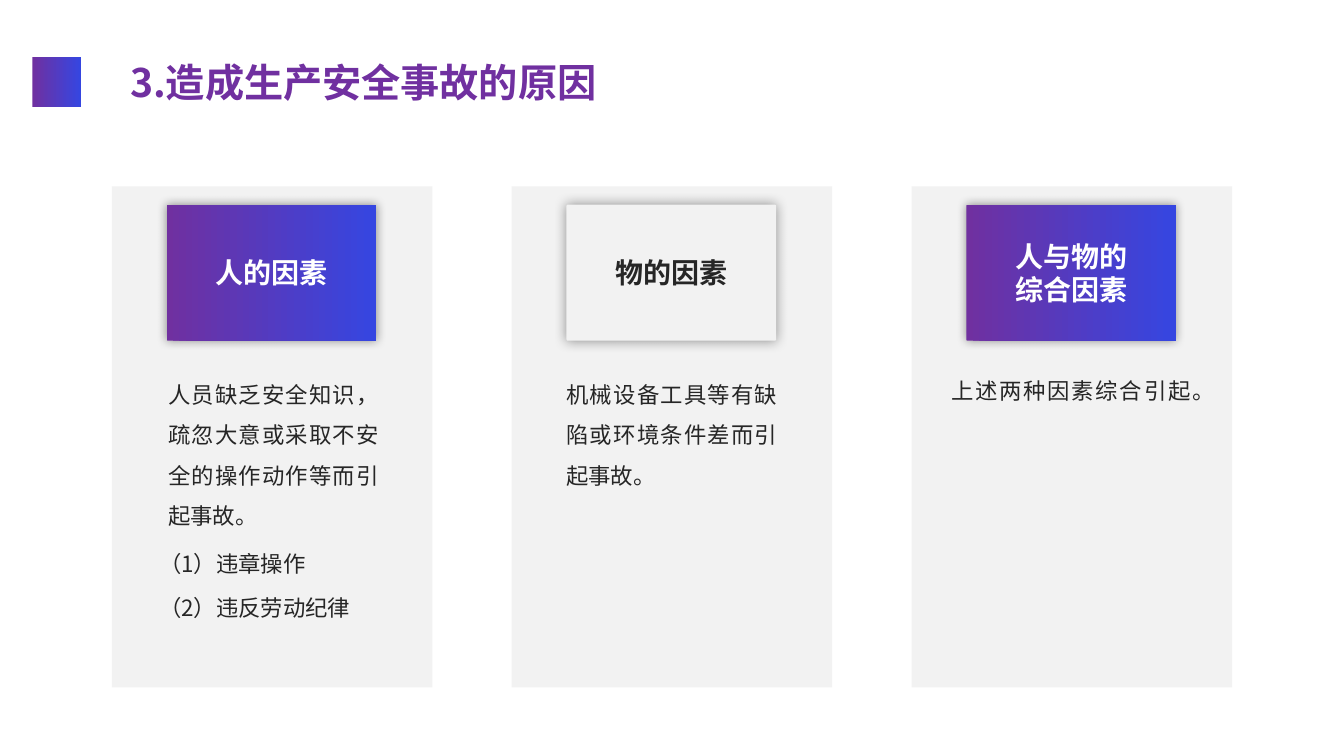
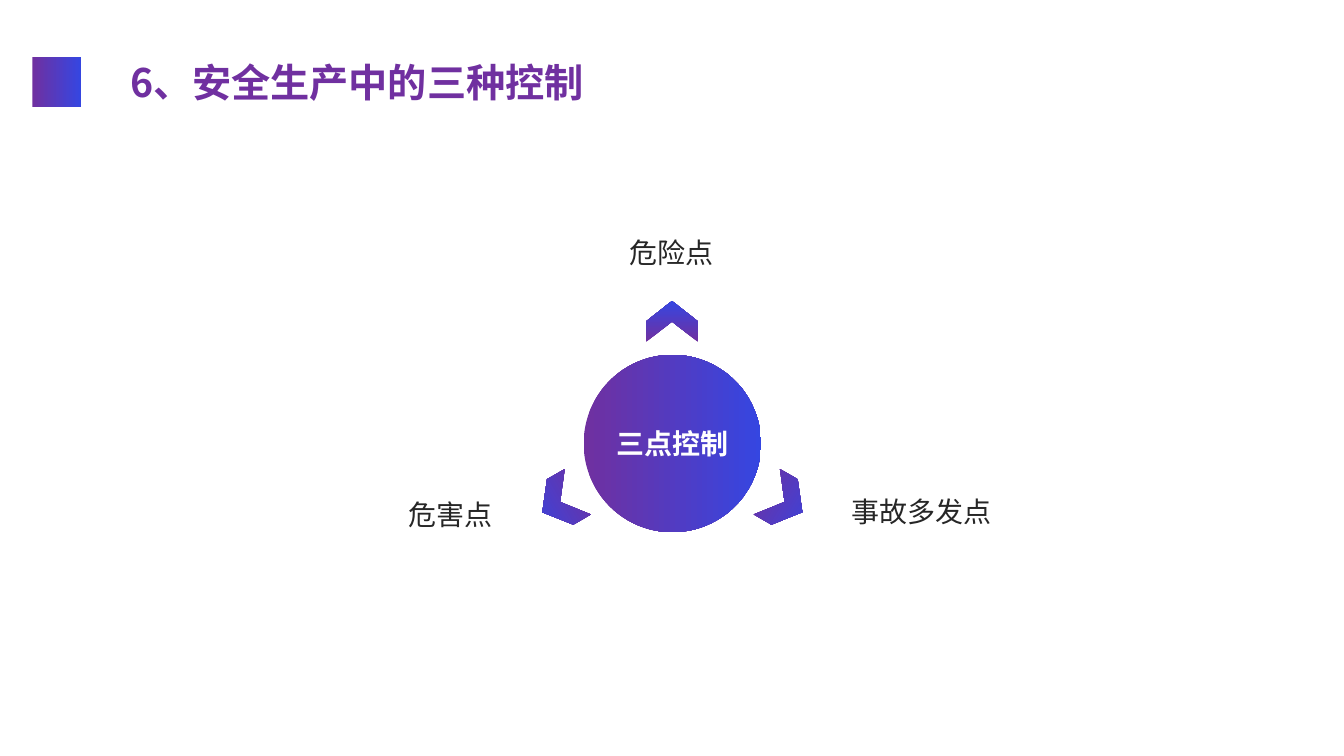
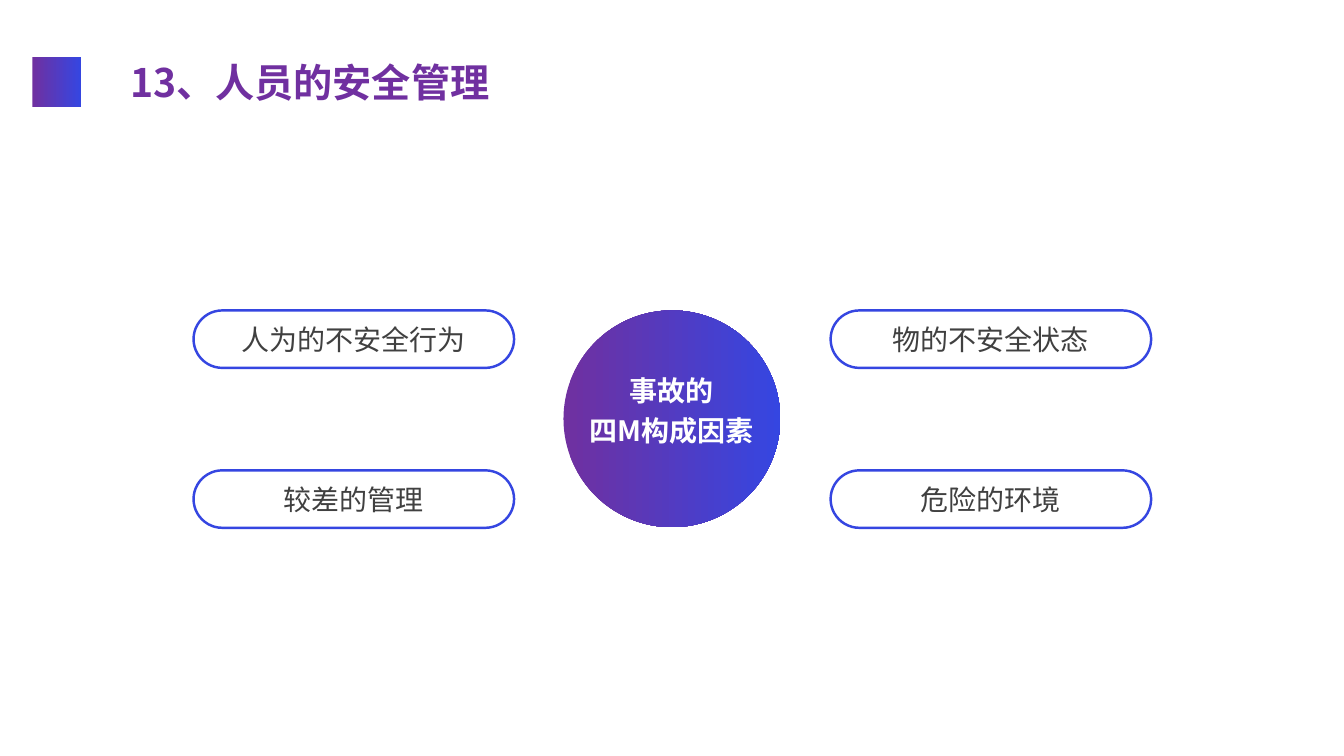
from lxml.etree import SubElement
from pptx import Presentation
from pptx.dml.color import RGBColor
from pptx.enum.shapes import MSO_SHAPE as Preset
from pptx.enum.text import MSO_ANCHOR as Anchor, MSO_AUTO_SIZE as AutoSize, PP_ALIGN as Align
from pptx.oxml.ns import qn
from pptx.util import Inches, Pt

COLORS = {"purple": "7030A0", "blue": "3546E1", "panel": "F2F2F2",
          "white": "FFFFFF", "ink": "262626", "soft": "404040", "shadow": "000000"}
GRADIENT = ("purple", "blue")
FONT = "Noto Sans CJK SC"
LEADING = 1.2
TITLE_ONLY, TITLE_AND_BODY = 5, 1


def grid(*cells):
    """Lengths on a grid of 40 columns by 22.5 rows, three cells to the inch."""
    return [Inches(cell / 3) for cell in cells]


def rgb(name):
    return RGBColor.from_string(COLORS[name])


def paint(fill, color):
    """Fill with one colour, or with a left-to-right gradient for a pair."""
    if color is None:
        fill.background()
    elif isinstance(color, tuple):
        fill.gradient()
        fill.gradient_angle = 0
        for stop, name in zip(fill.gradient_stops, color):
            stop.color.rgb = rgb(name)
    else:
        fill.solid()
        fill.fore_color.rgb = rgb(color)


class Deck:
    def __init__(self):
        self.presentation = Presentation()
        self.presentation.slide_width, self.presentation.slide_height = grid(40, 22.5)
        self.slide = None

    def add_slide(self, title, title_columns, layout=TITLE_ONLY):
        layouts = self.presentation.slide_layouts
        self.slide = self.presentation.slides.add_slide(layouts[layout])
        self.shape(Preset.RECTANGLE, (0.96, 1.71, 1.44, 1.47), GRADIENT)
        self.placeholder(0, (3.57, 1.59, title_columns, 1.71), [title],
                         size=28, bold=True, color=GRADIENT)

    def set_text(self, shape, lines, size=20, bold=False, color="ink", align=Align.LEFT,
                 anchor=Anchor.TOP, wrap=True, spacing=1, gap=0.0):
        frame = shape.text_frame
        frame.text = "\n".join(lines)
        for name, value in {"auto_size": AutoSize.NONE, "word_wrap": wrap,
                            "vertical_anchor": anchor}.items():
            setattr(frame, name, value)
        for index, paragraph in enumerate(frame.paragraphs):
            values = {"alignment": align, "line_spacing": Pt(size * LEADING * spacing),
                      "space_before": Pt(size * gap if index else 0)}
            for name, value in values.items():
                setattr(paragraph, name, value)
            properties = paragraph._p.get_or_add_pPr()
            for name, value in {"marL": "0", "indent": "0", "hangingPunct": "1"}.items():
                properties.set(name, value)
            SubElement(properties, qn("a:buNone"))
            for run in paragraph.runs:
                for name, value in {"name": FONT, "size": Pt(size), "bold": bold}.items():
                    setattr(run.font, name, value)
                paint(run.font.fill, color)
                SubElement(run._r.get_or_add_rPr(), qn("a:ea")).set("typeface", FONT)

    def placeholder(self, index, cells, lines, **style):
        """Move a template placeholder to the front and fill it."""
        shape = self.slide.placeholders[index]
        for name, value in zip(("left", "top", "width", "height"), grid(*cells)):
            setattr(shape, name, value)
        self.slide.shapes._spTree.append(shape._element)
        self.set_text(shape, lines, **style)

    def text(self, cells, lines, **style):
        self.set_text(self.slide.shapes.add_textbox(*grid(*cells)), lines, **style)

    def label(self, center, line):
        x, y = center
        self.text((x - 2.4, y - 0.66, 4.8, 1.32), [line],
                  align=Align.CENTER, anchor=Anchor.MIDDLE, wrap=False)

    def shape(self, preset, cells, fill=None, lines=(), line=None, rounding=None,
              rotation=0, color="white", bold=True):
        shape = self.slide.shapes.add_shape(preset, *grid(*cells))
        shape.shadow.inherit = False
        shape.rotation = rotation
        paint(shape.fill, fill)
        paint(shape.line.fill, line)
        if line:
            shape.line.width = Pt(1.75)
        if rounding is not None:
            shape.adjustments[0] = rounding
        if lines:
            for side in ("left", "right", "top", "bottom"):
                setattr(shape.text_frame, f"margin_{side}", 0)
            self.set_text(shape, lines, color=color, bold=bold, align=Align.CENTER,
                          anchor=Anchor.MIDDLE, wrap=False)
        return shape

    def glow(self, shape, blur):
        """Soft shadow on all sides."""
        effects = shape._element.spPr.find(qn("a:effectLst"))
        shadow = SubElement(effects, qn("a:outerShdw"), blurRad=str(Pt(blur)),
                            dist="0", dir="0", algn="ctr", rotWithShape="0")
        color = SubElement(shadow, qn("a:srgbClr"), val=COLORS["shadow"])
        SubElement(color, qn("a:alpha"), val="40000")


def causes_slide(deck):
    deck.add_slide("3.造成生产安全事故的原因", 14.64, TITLE_AND_BODY)
    # Three panels, each with a heading card
    cards = [(["人的因素"], GRADIENT, "white", 7),
             (["物的因素"], "panel", "ink", 9),
             (["人与物的", "综合因素"], GRADIENT, "white", 7)]
    for column, (lines, fill, color, blur) in enumerate(cards):
        left = 3.33 + 11.9 * column
        deck.shape(Preset.RECTANGLE, (left, 5.55, 9.54, 14.91), "panel")
        card = deck.shape(Preset.ROUNDED_RECTANGLE, (left + 1.63, 6.09, 6.24, 4.05),
                          fill, lines, rounding=0.01, color=color)
        deck.glow(card, blur)
    # Explanations
    body = {"size": 16, "align": Align.JUSTIFY}
    loose = {**body, "spacing": 1.5, "gap": 0.2}
    deck.text((4.71, 10.8, 6.87, 5.01),
              ["人员缺乏安全知识，疏忽大意或采取不安全的操作动作等而引起事故。"], **loose)
    deck.placeholder(1, (4.44, 15.81, 6.33, 2.76),
                     ["（1）违章操作", "（2）违反劳动纪律"], **loose)
    deck.text((16.56, 10.8, 6.87, 3.81),
              ["机械设备工具等有缺陷或环境条件差而引起事故。"], **loose)
    deck.text((28.02, 11.07, 7.77, 1.11), ["上述两种因素综合引起。"], **body)


def control_slide(deck):
    deck.add_slide("6、安全生产中的三种控制", 14.28)
    deck.shape(Preset.OVAL, (17.37, 10.56, 5.28, 5.28), GRADIENT, ["三点控制"])
    # Arrows pointing outwards to the labels
    points = [("危险点", (19.98, 7.5), (20, 9.57), 270),
              ("危害点", (13.41, 15.3), (16.67, 14.94), 150),
              ("事故多发点", (27.42, 15.21), (23.35, 14.94), 30)]
    for line, label_center, (x, y), rotation in points:
        deck.shape(Preset.CHEVRON, (x - 0.61, y - 0.78, 1.22, 1.56), GRADIENT,
                   rotation=rotation)
        deck.label(label_center, line)


def people_slide(deck):
    deck.add_slide("13、人员的安全管理", 11.49)
    deck.shape(Preset.OVAL, (16.77, 9.24, 6.45, 6.45), GRADIENT)
    deck.text((17.16, 10.98, 5.67, 2.52), ["事故的", "四M构成因素"],
              bold=True, color="white", align=Align.CENTER, gap=0.2)
    # Two rows of two outlined pills
    factors = [["人为的不安全行为", "物的不安全状态"], ["较差的管理", "危险的环境"]]
    for row, pair in enumerate(factors):
        for column, factor in enumerate(pair):
            deck.shape(Preset.ROUNDED_RECTANGLE,
                       (5.76 + 18.96 * column, 9.24 + 4.76 * row, 9.54, 1.71),
                       lines=[factor], line="blue", rounding=0.5, color="soft", bold=False)


def main():
    deck = Deck()
    for build in (causes_slide, control_slide, people_slide):
        build(deck)
    deck.presentation.save("out.pptx")


if __name__ == "__main__":
    main()
